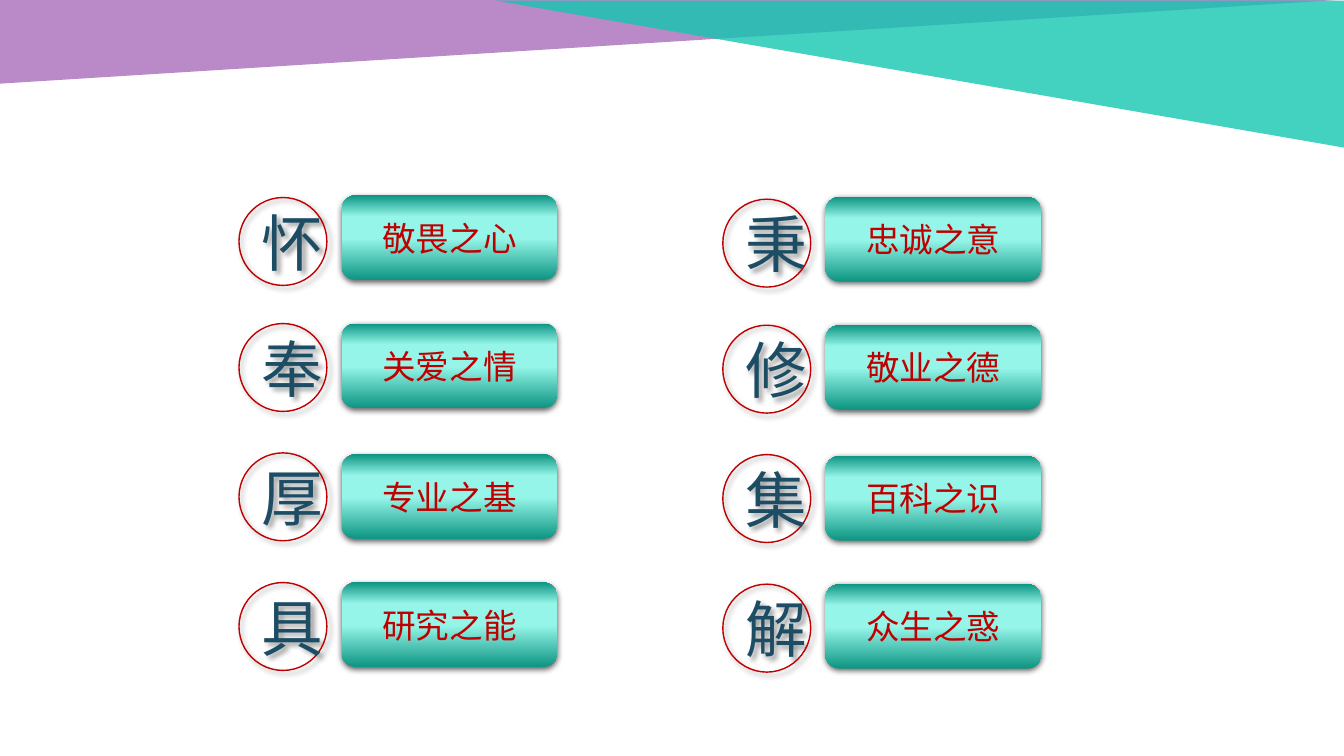
"""Build a slide of eight virtues, each a circled verb beside its phrase."""
from dataclasses import dataclass

from lxml import etree
from pptx import Presentation
from pptx.dml.color import RGBColor
from pptx.enum import shapes, text
from pptx.oxml.ns import qn
from pptx.util import Pt

COLUMNS = [
    [("怀", "敬畏之心"), ("奉", "关爱之情"), ("厚", "专业之基"), ("具", "研究之能")],
    [("秉", "忠诚之意"), ("修", "敬业之德"), ("集", "百科之识"), ("解", "众生之惑")],
]
BANNERS = [
    ("A86CBB", (0, 0, 956.2, 59.8), ("flipV",)),
    ("13C7AF", (354.2, 0.5, 606, 105), ("flipH", "flipV")),
]
PHRASE_TOPS = (139.6, 231.1, 324.6, 416.1)
VERB_TOPS = (141.1, 231.1, 323.5, 416.1)
PHRASE_LEFT, VERB_LEFT = 244, 170.7
PHRASE_WIDTH, PHRASE_HEIGHT = 154.2, 60.3
VERB_SIZE = 62.8
COLUMN_STEP, COLUMN_DROP = 345.6, 1.2


@dataclass(frozen=True)
class Theme:
    """Colours, fonts and type sizes."""

    red: str = "C00000"
    ink: str = "1D4D64"
    shade: str = "000000"
    gradient: tuple = ((0, "0E9583"), (49, "94F5E8"), (75, "94F5E8"), (100, "0E9583"))
    phrase_font: str = "Arial"
    verb_font: str = "Noto Sans CJK JP"
    phrase_size: int = 24
    verb_size: int = 44
    banner_alpha: int = 80


THEME = Theme()
KINDS = shapes.MSO_SHAPE


def add_node(parent, tag, **attributes):
    """Append a drawing element with the given attributes."""
    values = {name: str(value) for name, value in attributes.items()}
    return etree.SubElement(parent, qn(tag), values)


def add_shape(page, kind, place):
    """Add a preset shape with no inherited shadow or outline."""
    shape = page.shapes.add_shape(kind, *(Pt(length) for length in place))
    shape.shadow.inherit = False
    shape.line.fill.background()
    return shape


def add_shadow(shape, blur, distance, angle, alpha):
    """Cast a soft outer shadow."""
    effects = shape._element.spPr.find(qn("a:effectLst"))
    shadow = add_node(effects, "a:outerShdw", blurRad=int(Pt(blur)),
                      dist=int(Pt(distance)), dir=angle * 60000,
                      algn="ctr", rotWithShape=0)
    color = add_node(shadow, "a:srgbClr", val=THEME.shade)
    add_node(color, "a:alpha", val=alpha * 1000)


def fill_gradient(shape):
    """Fill a shape with the vertical theme gradient."""
    shape.fill.gradient()
    gradient = shape._element.spPr.find(qn("a:gradFill"))
    for child in list(gradient):
        gradient.remove(child)
    stops = add_node(gradient, "a:gsLst")
    for position, color in THEME.gradient:
        stop = add_node(stops, "a:gs", pos=position * 1000)
        add_node(stop, "a:srgbClr", val=color)
    add_node(gradient, "a:lin", ang=270 * 60000, scaled=0)


def write(shape, words, font, size, color):
    """Write one centred line in the middle of a shape."""
    frame = shape.text_frame
    frame.word_wrap = True
    frame.vertical_anchor = text.MSO_ANCHOR.MIDDLE
    para = frame.paragraphs[0]
    para.alignment = text.PP_ALIGN.CENTER
    span = para.add_run()
    span.text = words
    span.font.name = font
    span.font.size = Pt(size)
    span.font.color.rgb = RGBColor.from_string(color)
    add_node(span._r.get_or_add_rPr(), "a:ea", typeface="Noto Sans CJK JP")


def add_banner(page, color, place, flips):
    """Add a translucent triangle along the top edge."""
    banner = add_shape(page, KINDS.RIGHT_TRIANGLE, place)
    for flip in flips:
        banner._element.spPr.xfrm.set(flip, "1")
    banner.fill.solid()
    banner.fill.fore_color.rgb = RGBColor.from_string(color)
    tint = banner._element.spPr.find(qn("a:solidFill"))[0]
    add_node(tint, "a:alpha", val=THEME.banner_alpha * 1000)


def add_phrase(page, words, left, top):
    """Add a glossy phrase box."""
    box = add_shape(page, KINDS.ROUNDED_RECTANGLE, (left, top, PHRASE_WIDTH, PHRASE_HEIGHT))
    fill_gradient(box)
    add_shadow(box, 4.5, 1.5, 90, 63)
    write(box, words, THEME.phrase_font, THEME.phrase_size, THEME.red)


def add_verb(page, word, left, top):
    """Add a verb in an outlined circle."""
    circle = add_shape(page, KINDS.OVAL, (left, top, VERB_SIZE, VERB_SIZE))
    circle.fill.background()
    circle.line.color.rgb = RGBColor.from_string(THEME.red)
    circle.line.width = Pt(1)
    add_shadow(circle, 4, 3, 45, 40)
    write(circle, word, THEME.verb_font, THEME.verb_size, THEME.ink)


def main():
    """Build and save the deck."""
    deck = Presentation()
    deck.slide_width, deck.slide_height = Pt(960), Pt(540)
    page = deck.slides.add_slide(deck.slide_layouts[6])
    for banner in BANNERS:
        add_banner(page, *banner)
    for index, pairs in enumerate(COLUMNS):
        shift, drop = index * COLUMN_STEP, index * COLUMN_DROP
        for (verb, phrase), verb_top, phrase_top in zip(pairs, VERB_TOPS, PHRASE_TOPS):
            add_phrase(page, phrase, PHRASE_LEFT + shift, phrase_top + drop)
            add_verb(page, verb, VERB_LEFT + shift, verb_top + drop)
    deck.save("out.pptx")


if __name__ == "__main__":
    main()
